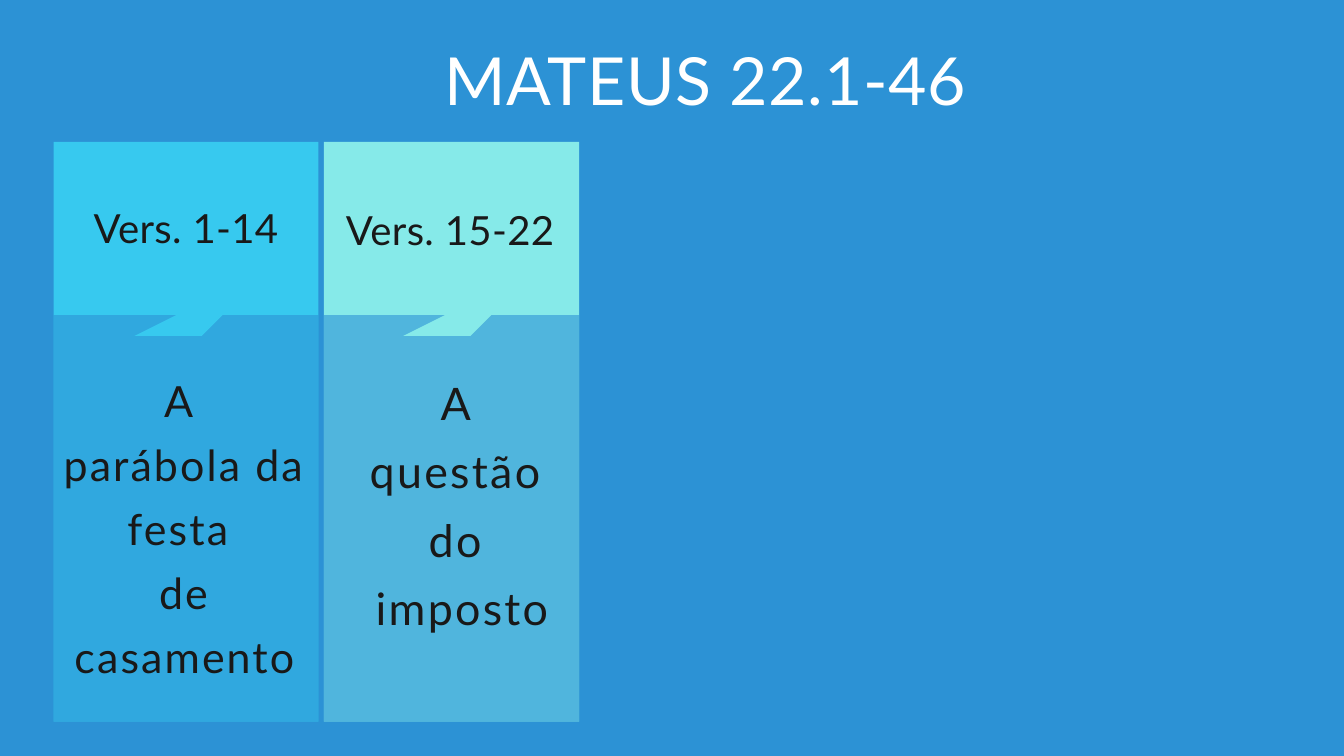
from pptx import Presentation
from pptx.dml.color import RGBColor
from pptx.enum.shapes import MSO_SHAPE
from pptx.enum.text import MSO_AUTO_SIZE, PP_ALIGN
from pptx.oxml.ns import qn
from pptx.util import Inches, Pt
from lxml import etree

RECTANGLE = MSO_SHAPE.RECTANGLE
CENTER = PP_ALIGN.CENTER
GROW = MSO_AUTO_SIZE.SHAPE_TO_FIT_TEXT

COLORS = {
    "background": "2C92D5",
    "cyan": "37C9EF",
    "mint": "86EAE9",
    "ink": "191919",
    "white": "FFFFFF",
}

presentation = Presentation()
presentation.slide_width = Inches(20)
presentation.slide_height = Inches(11.25)
slide = presentation.slides.add_slide(presentation.slide_layouts[6])
slide.background.fill.solid()
slide.background.fill.fore_color.rgb = RGBColor.from_string(COLORS["background"])

# Square grid: 20 columns across, 11.25 rows down
UNIT = presentation.slide_width // 20
CARD_TOP, BODY_TOP, CARD_BOTTOM = 2.11, 4.69, 10.74


def paint(shape, color, opacity=100):
    """Give the shape a flat fill without line or shadow; opacity in percent."""
    shape.shadow.inherit = False
    shape.line.fill.background()
    shape.fill.solid()
    shape.fill.fore_color.rgb = RGBColor.from_string(COLORS[color])
    if opacity < 100:
        color_element = shape.fill._xPr.find(qn("a:solidFill"))[0]
        etree.SubElement(color_element, qn("a:alpha"), val=str(opacity * 1000))


def add_text(box, lines, size, line_height, tracking, color="ink"):
    """Add centred paragraphs; box is in grid units, the rest in points."""
    text_box = slide.shapes.add_textbox(*(round(length * UNIT) for length in box))
    frame = text_box.text_frame
    frame.word_wrap = True
    frame.auto_size = GROW
    frame.margin_left = frame.margin_right = frame.margin_top = frame.margin_bottom = 0
    for index, line in enumerate(lines):
        paragraph = frame.add_paragraph() if index else frame.paragraphs[0]
        paragraph.alignment = CENTER
        paragraph.line_spacing = Pt(line_height)
        run = paragraph.add_run()
        run.text = line
        run.font.name = "Lato"
        run.font.size = Pt(size)
        run.font.color.rgb = RGBColor.from_string(COLORS[color])
        run._r.get_or_add_rPr().set("spc", str(round(tracking * 100)))


add_text((5.58, 0.46, 9.84, 1.32), ["MATEUS 22.1-46"], 71, 94.3, 0.7, "white")

# The pointer has its tip at (x, y) and 45-degree arms of the given reach
cards = [
    {
        "left": 0.8, "width": 3.94, "color": "cyan",
        "tip": (2.83, 5.18), "left_arm": 0.65, "right_arm": 0.69,
        "verses": "Vers. 1-14", "verses_box": (0.94, 2.97, 3.66, 0.79),
        "topic": ["A ", "parábola da festa ", "de casamento"],
        "topic_box": (0.8, 5.38, 3.89, 4.84), "topic_type": (46, 68.8, 2.3),
    },
    {
        "left": 4.82, "width": 3.8, "color": "mint",
        "tip": (6.71, 5.14), "left_arm": 0.62, "right_arm": 0.8,
        "verses": "Vers. 15-22", "verses_box": (4.88, 2.99, 3.64, 0.79),
        "topic": ["A ", "questão ", "do ", "imposto"],
        "topic_box": (4.88, 5.37, 3.99, 4.1), "topic_type": (48, 73.3, 2.5),
    },
]

for card in cards:
    # Full card, then a translucent veil over its body
    for top, color, opacity in ((CARD_TOP, card["color"], 100), (BODY_TOP, "background", 60)):
        panel = slide.shapes.add_shape(
            RECTANGLE, round(card["left"] * UNIT), round(top * UNIT),
            round(card["width"] * UNIT), round((CARD_BOTTOM - top) * UNIT))
        paint(panel, color, opacity)

    x, y = card["tip"]
    left_arm, right_arm = card["left_arm"], card["right_arm"]
    builder = slide.shapes.build_freeform(x + right_arm, y - right_arm, scale=UNIT)
    builder.add_line_segments([(x, y), (x - left_arm, y - left_arm)], close=True)
    paint(builder.convert_to_shape(), card["color"])

    add_text(card["verses_box"], [card["verses"]], 43, 56, 0.4)
    add_text(card["topic_box"], card["topic"], *card["topic_type"])

presentation.save("out.pptx")
